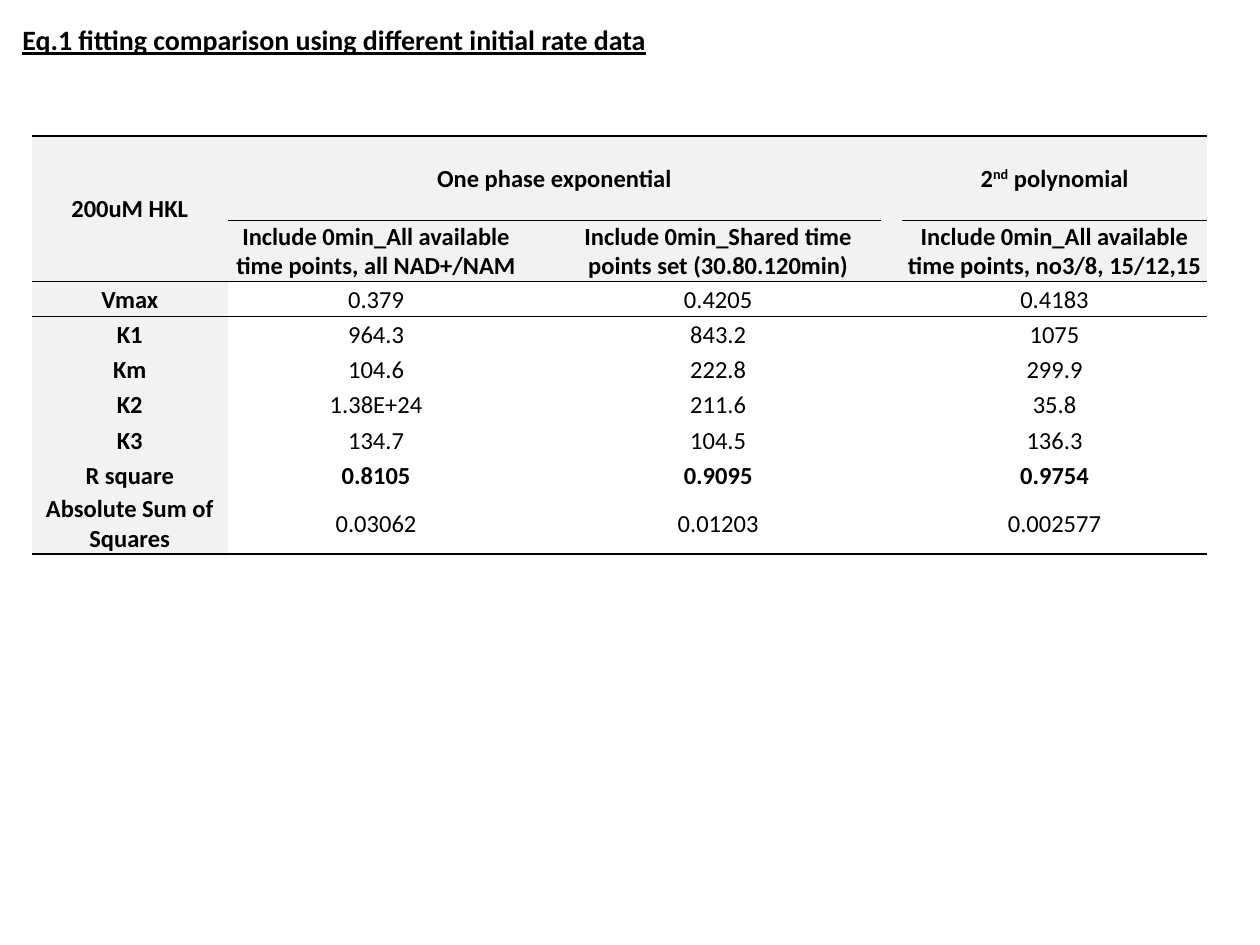
from dataclasses import dataclass

from lxml import etree
from pptx import Presentation
from pptx import util as u
from pptx.dml.color import RGBColor
from pptx.enum import text
from pptx.oxml import ns


@dataclass(frozen=True)
class Theme:
    font: str = "Calibri"
    ink: RGBColor = RGBColor(0, 0, 0)
    shade: RGBColor = RGBColor(0xF2, 0xF2, 0xF2)
    title_size: int = 16
    table_size: int = 14
    rule_width: int = 1


theme = Theme()


def style_run(run, size, bold):
    run.font.name = theme.font
    run.font.size = u.Pt(size)
    run.font.bold = bold
    run.font.color.rgb = theme.ink


def add_rule(cell, side):
    """Draw a thin rule on one side of a cell ("lnT" or "lnB")."""
    properties = cell._tc.get_or_add_tcPr()
    line = etree.SubElement(properties, ns.qn(f"a:{side}"), w=str(u.Pt(theme.rule_width)))
    fill = etree.SubElement(line, ns.qn("a:solidFill"))
    etree.SubElement(fill, ns.qn("a:srgbClr"), val=str(theme.ink))


presentation = Presentation()
presentation.slide_width = u.Inches(10)
presentation.slide_height = u.Inches(7.5)
slide = presentation.slides.add_slide(presentation.slide_layouts[6])

# Table content: narrow empty columns separate the three data sets
rows = [
    ["200uM HKL", "One phase exponential", "", "", "", ""],
    ["", "Include 0min_All available time points, all NAD+/NAM", "",
     "Include 0min_Shared time points set (30.80.120min)", "",
     "Include 0min_All available time points, no3/8, 15/12,15"],
    ["Vmax", "0.379", "", "0.4205", "", "0.4183"],
    ["K1", "964.3", "", "843.2", "", "1075"],
    ["Km", "104.6", "", "222.8", "", "299.9"],
    ["K2", "1.38E+24", "", "211.6", "", "35.8"],
    ["K3", "134.7", "", "104.5", "", "136.3"],
    ["R square", "0.8105", "", "0.9095", "", "0.9754"],
    ["Absolute Sum of Squares", "0.03062", "", "0.01203", "", "0.002577"],
]
column_widths = [1.56, 2.35, 0.25, 2.58, 0.17, 2.42]
row_heights = [0.67, 0.48] + [0.28] * 6 + [0.47]
data_columns = (1, 3, 5)
last_row = len(rows) - 1

# Table frame, without a banded style
frame = slide.shapes.add_table(
    len(rows), len(column_widths), u.Inches(0.25), u.Inches(1.08),
    u.Inches(sum(column_widths)), u.Inches(sum(row_heights)))
table = frame.table
table.first_row = table.horz_banding = False
table._tbl.tblPr.find(ns.qn("a:tableStyleId")).text = "{2D5ABB26-0587-4C30-8999-92F81FD0307C}"
for column, width in zip(table.columns, column_widths):
    column.width = u.Inches(width)
for row, height in zip(table.rows, row_heights):
    row.height = u.Inches(height)
table.cell(0, 0).merge(table.cell(1, 0))
table.cell(0, 1).merge(table.cell(0, 3))

# Cells
for r, values in enumerate(rows):
    for c, value in enumerate(values):
        cell = table.cell(r, c)
        cell.margin_left = cell.margin_right = cell.margin_top = u.Inches(0.01)
        cell.margin_bottom = 0
        cell.vertical_anchor = text.MSO_ANCHOR.MIDDLE
        paragraph = cell.text_frame.paragraphs[0]
        paragraph.alignment = text.PP_ALIGN.CENTER

        if (r, c) == (0, 5):
            for part in ("2", "nd", " polynomial"):
                paragraph.add_run().text = part
            paragraph.runs[1]._r.get_or_add_rPr().set("baseline", "30000")
        elif value:
            paragraph.text = value
        else:
            # Keeps empty cells from stretching their row
            etree.SubElement(paragraph._p, ns.qn("a:endParaRPr"), sz=str(theme.table_size * 100))
        for run in paragraph.runs:
            style_run(run, theme.table_size, r < 2 or c == 0 or values[0] == "R square")

        # Rules: table top, under group headings, under header, table bottom
        under_group = c in data_columns
        if r in (0, 2) or (r == 1 and under_group):
            add_rule(cell, "lnT")
        if r in (1, last_row) or (r == 0 and under_group):
            add_rule(cell, "lnB")

        if r < 2 or c == 0:
            cell.fill.solid()
            cell.fill.fore_color.rgb = theme.shade
        else:
            cell.fill.background()

# Title
title = slide.shapes.add_textbox(u.Inches(0.08), u.Inches(0.13), u.Inches(5.23), u.Inches(0.37))
title.text_frame.word_wrap = False
title.text_frame.auto_size = text.MSO_AUTO_SIZE.SHAPE_TO_FIT_TEXT
title.text_frame.text = "Eq.1 fitting comparison using different initial rate data"
title_run = title.text_frame.paragraphs[0].runs[0]
style_run(title_run, theme.title_size, True)
title_run.font.underline = True

presentation.save("out.pptx")
